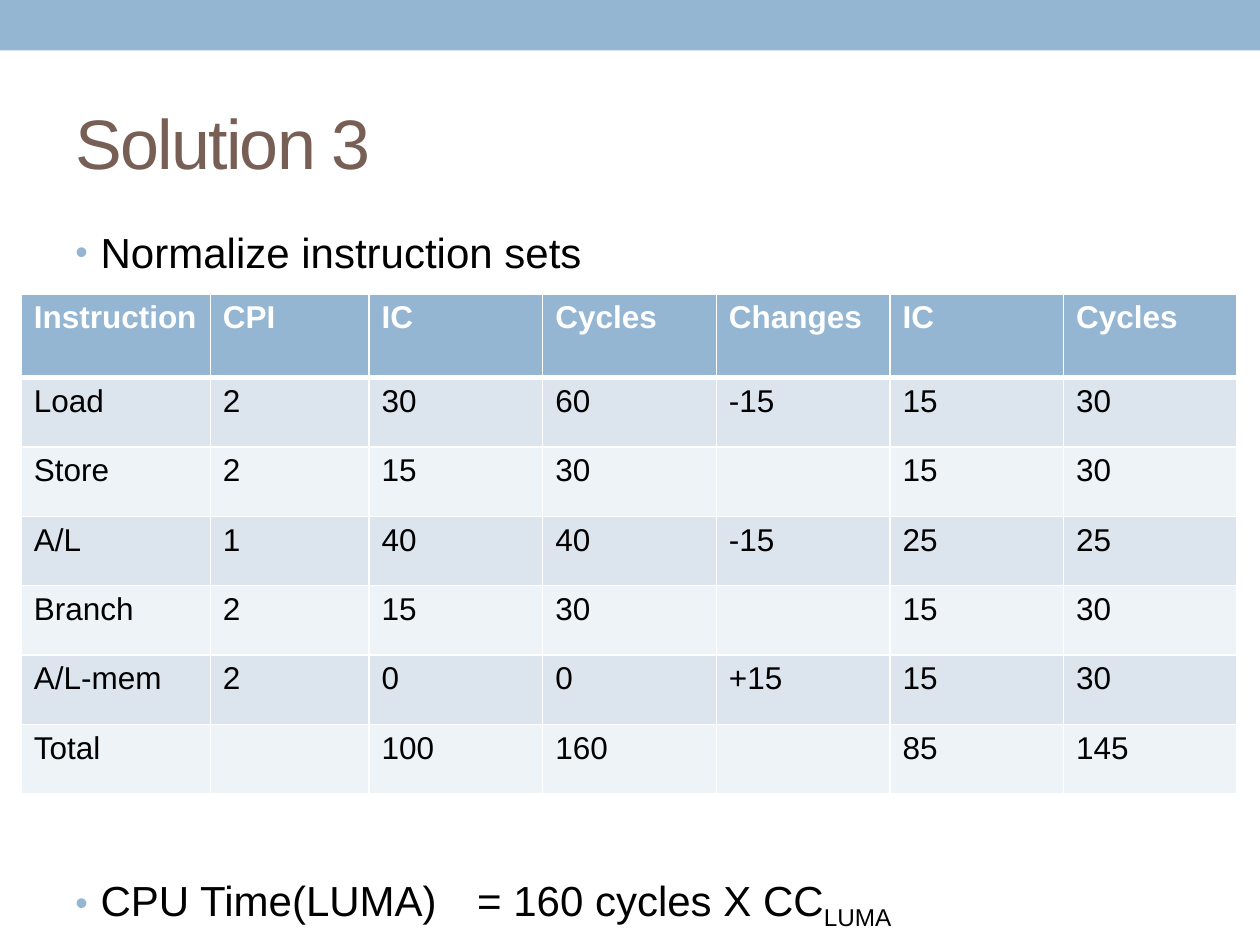
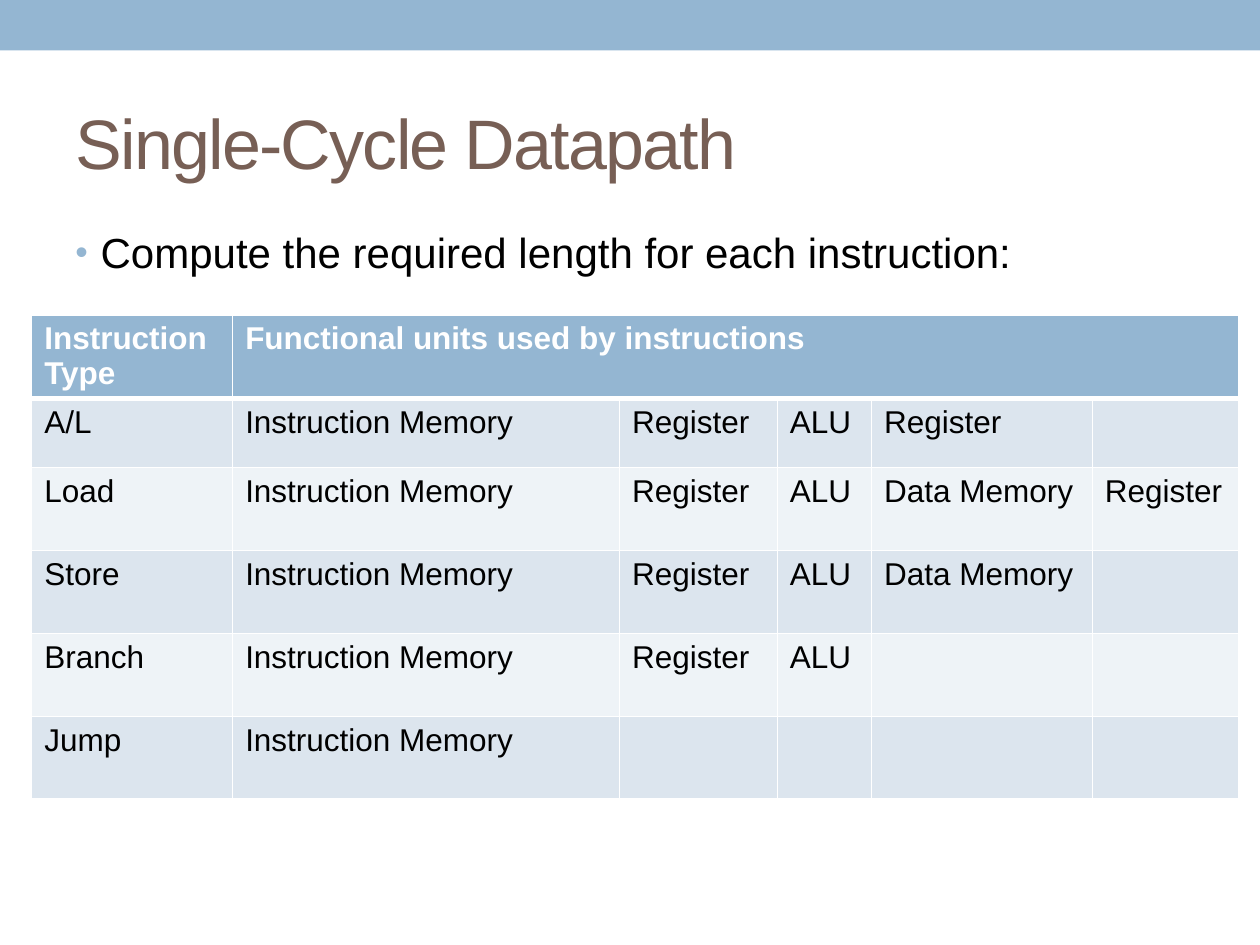
import dataclasses

import lxml.etree
import pptx
import pptx.dml.color
import pptx.enum.shapes
import pptx.enum.text
import pptx.oxml.ns
import pptx.util

Cm = pptx.util.Cm
Pt = pptx.util.Pt
qn = pptx.oxml.ns.qn


@dataclasses.dataclass(frozen=True)
class Theme:
    font: str = "Arial"
    blue: str = "94B6D2"
    brown: str = "775F55"
    black: str = "000000"
    white: str = "FFFFFF"
    stripes: tuple = ("DCE5EE", "EEF3F7")
    title_size: int = 40
    body_size: int = 24
    table_size: int = 18
    thin: int = 1
    thick: int = 3


def rgb(color):
    return pptx.dml.color.RGBColor.from_string(color)


def add_xml(parent, tag, **attributes):
    values = {name: str(value) for name, value in attributes.items()}
    return lxml.etree.SubElement(parent, qn(tag), values)


def write_text(para, text, *, font, size, color, bold=False, spacing=None, baseline=None):
    span = para.add_run()
    span.text = text
    span.font.name = font
    span.font.size = Pt(size)
    span.font.bold = bold
    span.font.color.rgb = rgb(color)
    properties = span.font._element
    if spacing is not None:
        properties.set("spc", str(spacing))
    if baseline is not None:
        properties.set("baseline", str(baseline))


class DeckBuilder:
    def __init__(self, theme):
        self.theme = theme
        self.deck = pptx.Presentation()
        self.deck.slide_width = Cm(25.4)
        self.deck.slide_height = Cm(19.05)
        self.page = None

    def add_page(self, title):
        self.page = self.deck.slides.add_slide(self.deck.slide_layouts[6])
        self.add_band()
        self.add_title(title)

    def add_band(self):
        band = self.page.shapes.add_shape(
            pptx.enum.shapes.MSO_SHAPE.RECTANGLE, 0, 0, self.deck.slide_width, Cm(1.02))
        band.shadow.inherit = False
        band.fill.solid()
        band.fill.fore_color.rgb = rgb(self.theme.blue)
        band.line.fill.background()

    def add_frame(self, top, height):
        box = self.page.shapes.add_textbox(Cm(1.27), Cm(top), Cm(22.86), Cm(height))
        box.text_frame.word_wrap = True
        return box.text_frame

    def add_title(self, title):
        frame = self.add_frame(1.48, 2.75)
        frame.vertical_anchor = pptx.enum.text.MSO_ANCHOR.MIDDLE
        write_text(frame.paragraphs[0], title, font=self.theme.font,
                   size=self.theme.title_size, color=self.theme.brown, spacing=-100)

    def add_body(self, height):
        return self.add_frame(4.45, height)

    def add_bullet(self, frame, text, subscript="", gap=3, tab=None):
        para = frame.paragraphs[0]
        if para.runs:
            para = frame.add_paragraph()
        para.space_before = Pt(gap)
        properties = para._p.get_or_add_pPr()
        properties.set("marL", str(Cm(0.51)))
        properties.set("indent", str(-Cm(0.51)))
        add_xml(add_xml(properties, "a:buClr"), "a:srgbClr", val=self.theme.blue)
        add_xml(properties, "a:buSzPct", val=85000)
        add_xml(properties, "a:buFont", typeface=self.theme.font)
        add_xml(properties, "a:buChar", char="•")
        if tab:
            add_xml(add_xml(properties, "a:tabLst"), "a:tab", pos=Cm(tab), algn="l")
        style = dict(font=self.theme.font, size=self.theme.body_size, color=self.theme.black)
        write_text(para, text, **style)
        if subscript:
            write_text(para, subscript, baseline=-25000, **style)

    def add_table(self, left, top, columns, heights, rows):
        table = self.page.shapes.add_table(
            len(rows), len(columns), Cm(left), Cm(top),
            Cm(sum(columns)), Cm(sum(heights))).table
        for column, width in zip(table.columns, columns):
            column.width = Cm(width)
        for row, height in zip(table.rows, heights):
            row.height = Cm(height)
        for index, texts in enumerate(rows):
            for cell, text in zip(table.rows[index].cells, texts):
                self.style_cell(cell, text, index)
        return table

    def style_cell(self, cell, text, row):
        theme = self.theme
        header = row == 0
        widths = dict(
            L=theme.thin, R=theme.thin,
            T=theme.thick if row == 1 else theme.thin,
            B=theme.thick if header else theme.thin)
        properties = cell._tc.get_or_add_tcPr()
        for side, width in widths.items():
            line = add_xml(properties, f"a:ln{side}", w=Pt(width))
            add_xml(add_xml(line, "a:solidFill"), "a:srgbClr", val=theme.white)
        cell.fill.solid()
        cell.fill.fore_color.rgb = rgb(theme.blue if header else theme.stripes[(row - 1) % 2])
        if header:
            cell.margin_top = Cm(0.11)
            cell.margin_bottom = Cm(0.03)
        if text:
            write_text(cell.text_frame.paragraphs[0], text, font=theme.font,
                       size=theme.table_size, bold=header,
                       color=theme.white if header else theme.black)


def add_solution_page(builder):
    builder.add_page("Solution 3")
    body = builder.add_body(14.6)
    builder.add_bullet(body, "Normalize instruction sets")
    builder.add_bullet(body, "CPU Time(LUMA)\t= 160 cycles X CC", "LUMA", gap=341, tab=8.1)
    rows = [
        ("Instruction", "CPI", "IC", "Cycles", "Changes", "IC", "Cycles"),
        ("Load", "2", "30", "60", "-15", "15", "30"),
        ("Store", "2", "15", "30", "", "15", "30"),
        ("A/L", "1", "40", "40", "-15", "25", "25"),
        ("Branch", "2", "15", "30", "", "15", "30"),
        ("A/L-mem", "2", "0", "0", "+15", "15", "30"),
        ("Total", "", "100", "160", "", "85", "145"),
    ]
    builder.add_table(0.43, 5.93, [3.81, 3.2] + [3.5] * 5, [1.68] + [1.4] * 6, rows)


def add_datapath_page(builder):
    builder.add_page("Single-Cycle Datapath")
    builder.add_bullet(builder.add_body(13.54),
                       "Compute the required length for each instruction:")
    units = {
        "A/L": ("Register", "ALU", "Register", ""),
        "Load": ("Register", "ALU", "Data Memory", "Register"),
        "Store": ("Register", "ALU", "Data Memory", ""),
        "Branch": ("Register", "ALU", "", ""),
        "Jump": ("", "", "", ""),
    }
    rows = [("Instruction Type", "Functional units used by instructions", "", "", "", "")]
    rows += [(kind, "Instruction Memory", *used) for kind, used in units.items()]
    table = builder.add_table(0.64, 6.36, [4.05, 7.8, 3.18, 1.9, 4.45, 2.96],
                              [1.67, 1.4] + [1.67] * 4, rows)
    table.cell(0, 1).merge(table.cell(0, 5))


def main():
    builder = DeckBuilder(Theme())
    add_solution_page(builder)
    add_datapath_page(builder)
    builder.deck.save("out.pptx")


if __name__ == "__main__":
    main()
